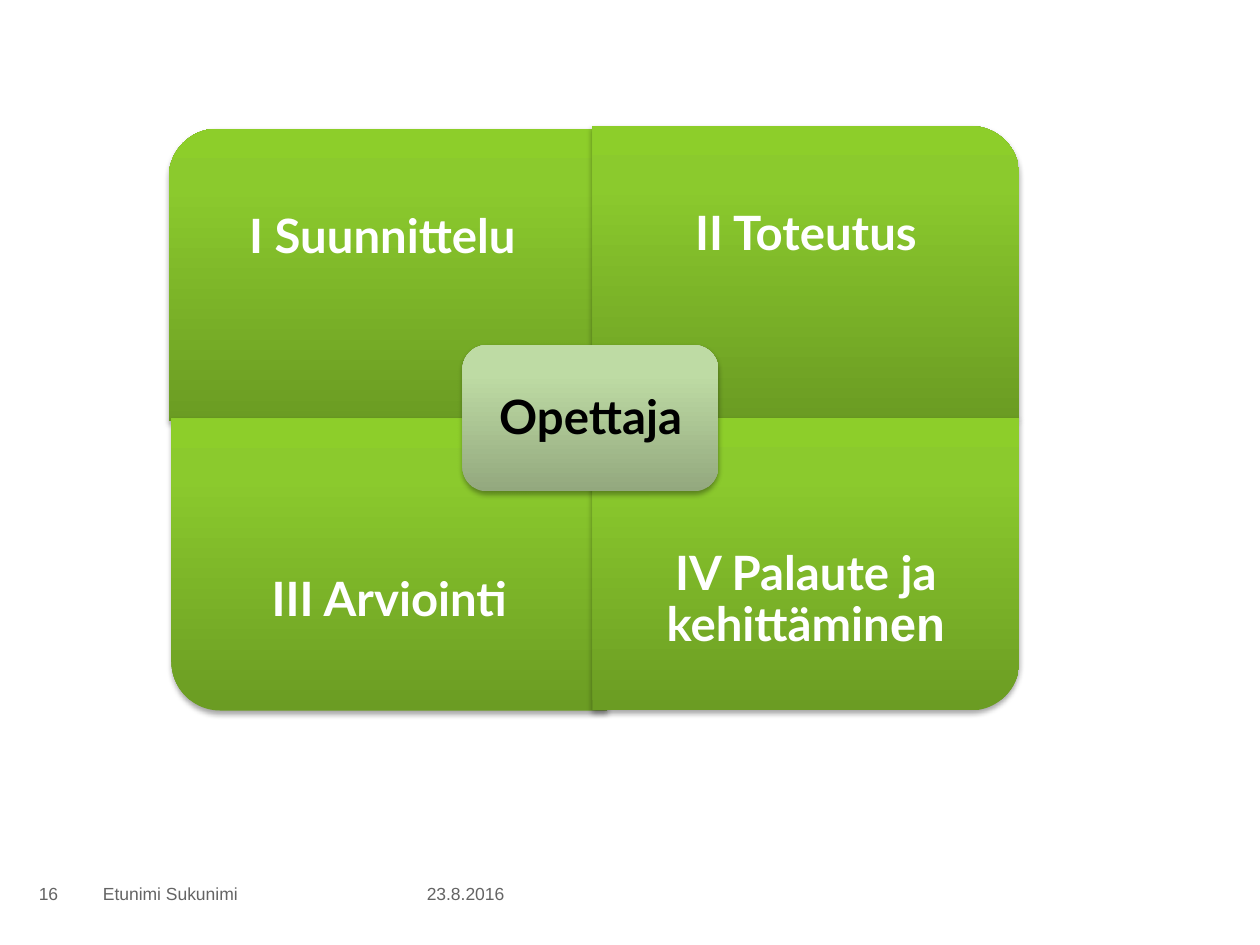
from lxml import etree
from pptx import Presentation
from pptx.dml.color import RGBColor
from pptx.enum.shapes import MSO_SHAPE
from pptx.enum.text import MSO_ANCHOR, PP_ALIGN
from pptx.oxml import parse_xml
from pptx.oxml.ns import nsdecls, qn
from pptx.util import Pt

ROUND_ONE, ROUND_ALL = MSO_SHAPE.ROUND_1_RECTANGLE, MSO_SHAPE.ROUNDED_RECTANGLE
LEFT, CENTER, RIGHT = PP_ALIGN.LEFT, PP_ALIGN.CENTER, PP_ALIGN.RIGHT
MIDDLE = MSO_ANCHOR.MIDDLE

COLORS = {
    "phase_low": "6B9C23", "phase_mid": "8BCA2D", "phase_high": "8DCE2A",
    "core_low": "93A87E", "core_mid": "BEDBA4", "core_high": "BFDDA4",
    "phase_text": "FFFFFF", "core_text": "000000", "footer": "646464",
}


def add_panel(kind, left, top, width, height, rotation, palette):
    """Add a shaded panel; the frame is how it appears after rotation."""
    if rotation % 180:
        left, top = left + (width - height) / 2, top + (height - width) / 2
        width, height = height, width
    panel = slide.shapes.add_shape(kind, Pt(left), Pt(top), Pt(width), Pt(height))
    panel.rotation = rotation
    panel.line.fill.background()
    panel.fill.background()
    stops = "".join(
        f'<a:gs pos="{pos}"><a:srgbClr val="{COLORS[f"{palette}_{level}"]}"/></a:gs>'
        for pos, level in ((0, "low"), (80000, "mid"), (100000, "high")))
    properties = panel._element.spPr
    no_fill = properties.find(qn("a:noFill"))
    properties.replace(no_fill, parse_xml(
        f'<a:gradFill {nsdecls("a")} rotWithShape="0"><a:gsLst>{stops}</a:gsLst>'
        '<a:lin ang="16200000" scaled="0"/></a:gradFill>'))
    panel.shadow.inherit = False
    effects = properties.find(qn("a:effectLst"))
    shadow = etree.SubElement(
        effects, qn("a:outerShdw"), blurRad=str(Pt(3.1)), dist=str(Pt(1.8)),
        dir="5400000", rotWithShape="0")
    shade = etree.SubElement(shadow, qn("a:srgbClr"), val="000000")
    etree.SubElement(shade, qn("a:alpha"), val="35000")


def add_label(left, top, width, height, runs, size, color, align, insets, bold, wrap):
    box = slide.shapes.add_textbox(Pt(left), Pt(top), Pt(width), Pt(height))
    frame = box.text_frame
    frame.word_wrap = wrap
    frame.vertical_anchor = MIDDLE
    (frame.margin_left, frame.margin_top,
     frame.margin_right, frame.margin_bottom) = map(Pt, insets)
    paragraph = frame.paragraphs[0]
    paragraph.alignment = align
    if wrap:
        paragraph.line_spacing = 0.9
    for text, font in runs:
        run = paragraph.add_run()
        run.text = text
        run.font.name = font
        run.font.size = Pt(size)
        run.font.bold = bold
        run.font.color.rgb = RGBColor.from_string(COLORS[color])


prs = Presentation()
prs.slide_width, prs.slide_height = Pt(720), Pt(540)
slide = prs.slides.add_slide(prs.slide_layouts[6])

# Footer
footer = [
    (210.25, 85, "23.8.2016", RIGHT, 7.2),
    (51.8, 156.2, "Etunimi Sukunimi", LEFT, 0),
    (15.1, 33.8, "16", LEFT, 0),
]
for left, width, text, align, right_inset in footer:
    add_label(left, 496.8, width, 28.1, [(text, "Arial")], 10, "footer", align,
              (7.2, 3.6, right_inset, 3.6), False, False)

# Four phases, each with its round corner turned outwards
PHASE_HEIGHT, LABEL_HEIGHT = 167, 125
phases = [
    (96.5, 73.5, 244, 270, 0, [("I Suunnittelu", "Lato")]),
    (338.5, 72, 244, 0, 0, [("II Toteutus", "Lato")]),
    (98, 239, 249, 180, 1, [("III Arviointi", "Lato")]),
    (338.5, 239, 244, 90, 1, [("IV Palaute ja kehittämin", "Lato"), ("en", "Arial")]),
]
for left, top, width, rotation, row, runs in phases:
    add_panel(ROUND_ONE, left, top, width, PHASE_HEIGHT, rotation, "phase")
    label_top = top + row * (PHASE_HEIGHT - LABEL_HEIGHT)
    add_label(left, label_top, width, LABEL_HEIGHT, runs, 27, "phase_text", CENTER,
              (15.1,) * 4, True, True)

# The teacher in the middle
add_panel(ROUND_ALL, 264.25, 197.25, 146.25, 83.5, 0, "core")
add_label(268.5, 201.5, 138, 75.5, [("Opettaja", "Lato")], 27, "core_text", CENTER,
          (8,) * 4, True, True)

prs.save("out.pptx")
